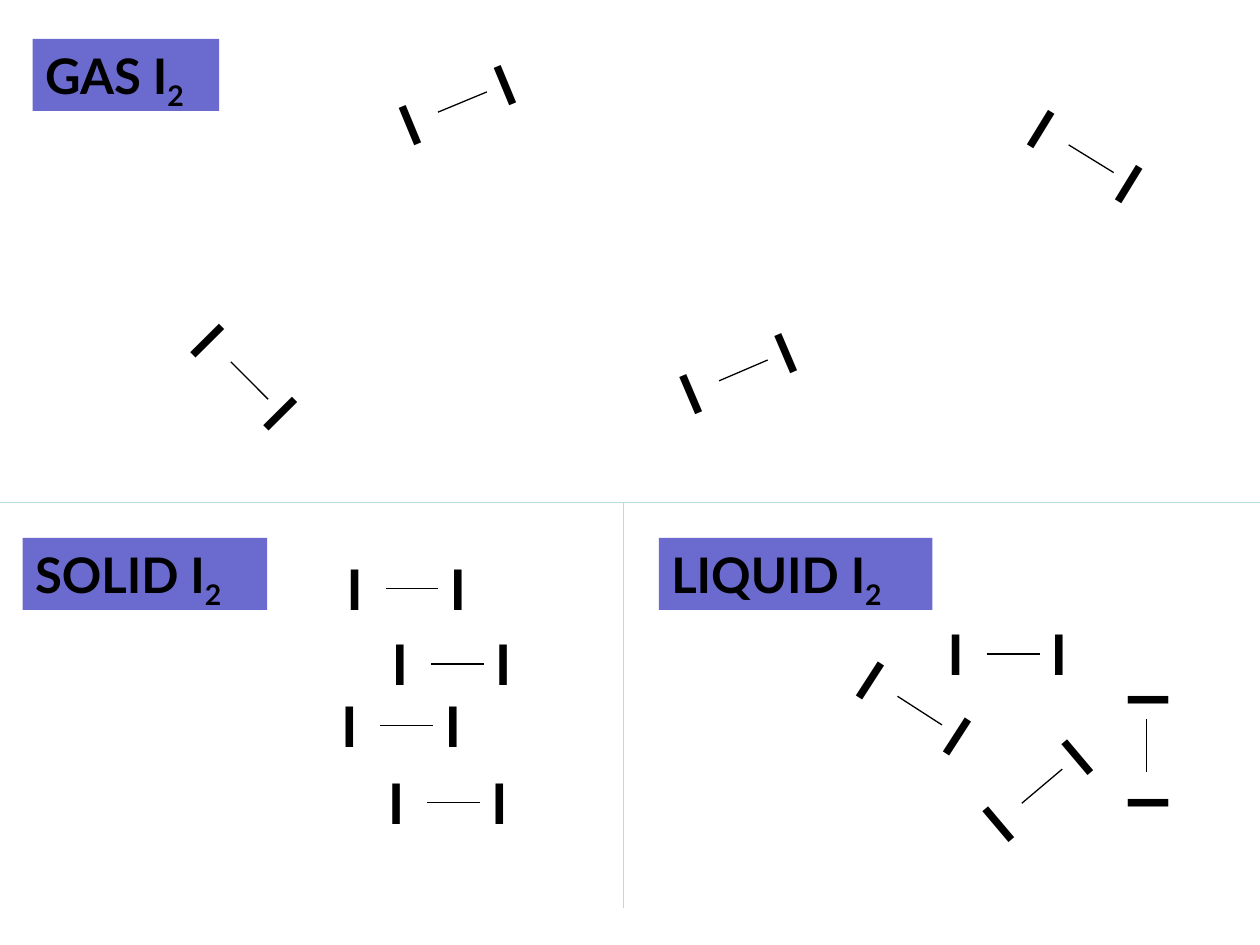
from math import cos, radians, sin

from lxml.etree import SubElement
from pptx import Presentation
from pptx.dml.color import RGBColor
from pptx.enum.shapes import MSO_CONNECTOR, MSO_SHAPE
from pptx.enum.text import MSO_ANCHOR, MSO_AUTO_SIZE, PP_ALIGN
from pptx.oxml.ns import qn
from pptx.util import Inches, Pt

FONT = "Lato"
BLACK, VIOLET, TEAL = "000000", "6B6BCF", "B6DCDF"

# Molecules: centre x, centre y, clockwise angle in degrees
SOLID = [(3.27, 4.67, 0), (3.63, 5.27, 0), (3.23, 5.76, 0), (3.6, 6.37, 0)]
LIQUID = [(8.04, 5.19, 0), (8.27, 6.24, 319.8), (7.3, 5.64, 32.8), (9.1, 5.92, 270)]
GAS = [(3.67, 0.81, 337.5), (5.9, 2.94, 336.8), (1.98, 3.02, 45.2), (8.66, 1.26, 31.6)]

# Phase labels: text, left, top, width
LABELS = [
    ("SOLID I", 0.18, 4.27, 1.94),
    ("LIQUID I", 5.23, 4.27, 2.17),
    ("GAS I", 0.26, 0.31, 1.48),
]
LABEL_H = 0.57

DIVIDERS = [(0, 3.99, 10, 3.99), (4.95, 3.99, 4.95, 7.21)]

ATOM_W, ATOM_H = 0.42, 0.64
ATOM_OFFSET = 0.41  # molecule centre to atom centre
BOND_HALF = 0.21


def rgb(color):
    return RGBColor.from_string(color)


def add_line(shapes, x1, y1, x2, y2, color):
    line = shapes.add_connector(
        MSO_CONNECTOR.STRAIGHT, Inches(x1), Inches(y1), Inches(x2), Inches(y2))
    line.line.color.rgb = rgb(color)
    line.line.width = Pt(0.75)
    SubElement(line._element.spPr, qn("a:effectLst"))


def write(shape, text, size):
    """Put one bold, left-aligned line in the shape and return its paragraph."""
    tf = shape.text_frame
    tf.word_wrap = False
    tf.auto_size = MSO_AUTO_SIZE.SHAPE_TO_FIT_TEXT
    tf.vertical_anchor = MSO_ANCHOR.TOP
    p = tf.paragraphs[0]
    p.alignment = PP_ALIGN.LEFT
    p.font.name = FONT
    p.font.size = Pt(size)
    p.font.bold = True
    p.font.color.rgb = rgb(BLACK)
    p.add_run().text = text
    return p


def add_molecule(s, x, y, angle):
    shapes = s.shapes.add_group_shape().shapes
    ux, uy = cos(radians(angle)), sin(radians(angle))
    dx, dy = BOND_HALF * ux, BOND_HALF * uy
    add_line(shapes, x - dx, y - dy, x + dx, y + dy, BLACK)
    for offset in (-ATOM_OFFSET, ATOM_OFFSET):
        atom = shapes.add_textbox(
            Inches(x + offset * ux - ATOM_W / 2), Inches(y + offset * uy - ATOM_H / 2),
            Inches(ATOM_W), Inches(ATOM_H))
        atom.rotation = angle
        write(atom, "I", 32)


def add_label(s, text, x, y, w):
    label = s.shapes.add_shape(
        MSO_SHAPE.RECTANGLE, Inches(x), Inches(y), Inches(w), Inches(LABEL_H))
    label.shadow.inherit = False
    label.fill.solid()
    label.fill.fore_color.rgb = rgb(VIOLET)
    label.line.fill.background()
    r = write(label, text, 28).add_run()
    r.text = "2"
    r.font._element.set("baseline", "-25000")


def main():
    prs = Presentation()
    prs.slide_width, prs.slide_height = Inches(10), Inches(7.5)
    s = prs.slides.add_slide(prs.slide_layouts[6])
    for molecule in SOLID + LIQUID + GAS:
        add_molecule(s, *molecule)
    for divider in DIVIDERS:
        add_line(s.shapes, *divider, TEAL)
    for label in LABELS:
        add_label(s, *label)
    prs.save("out.pptx")


if __name__ == "__main__":
    main()
